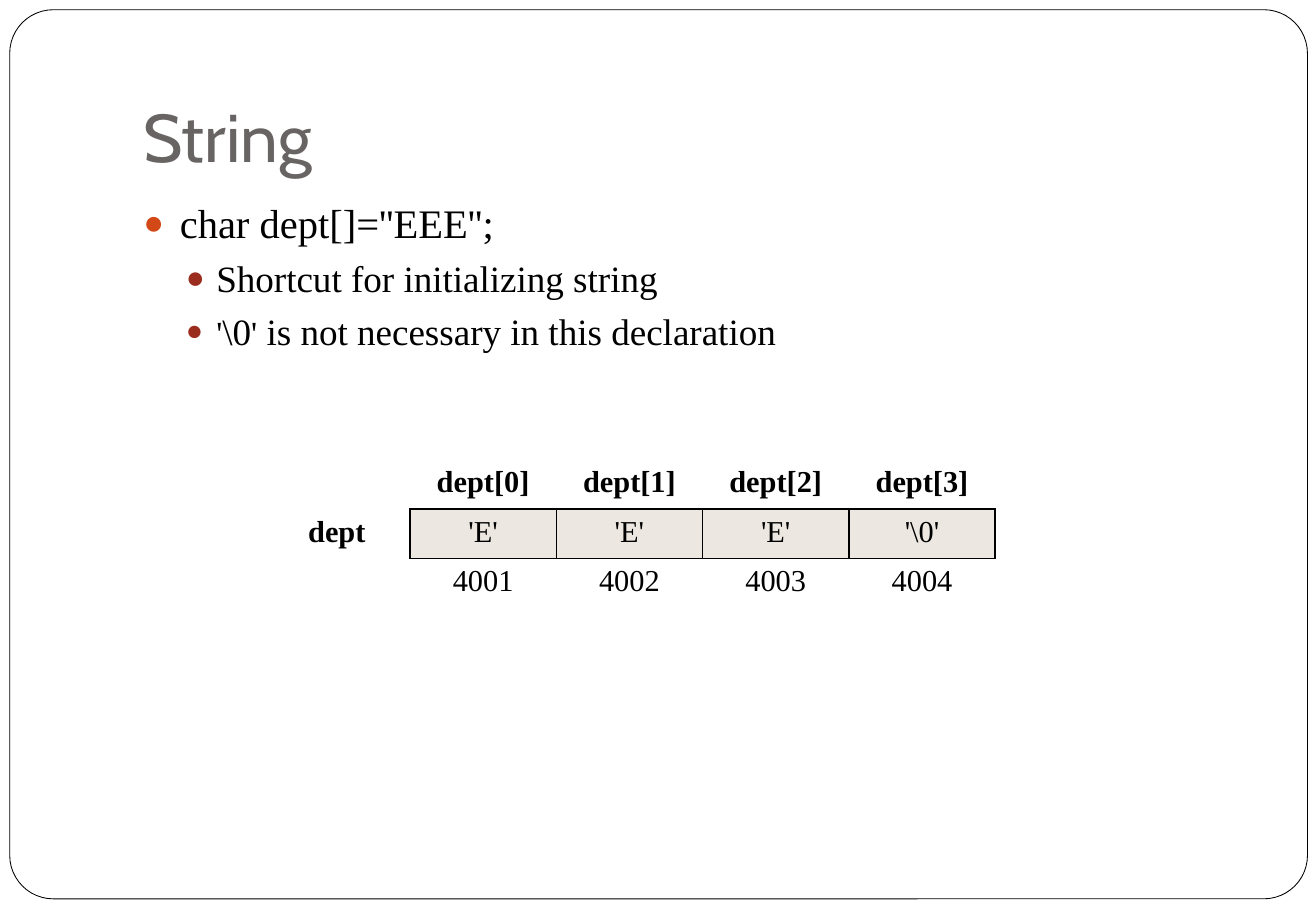
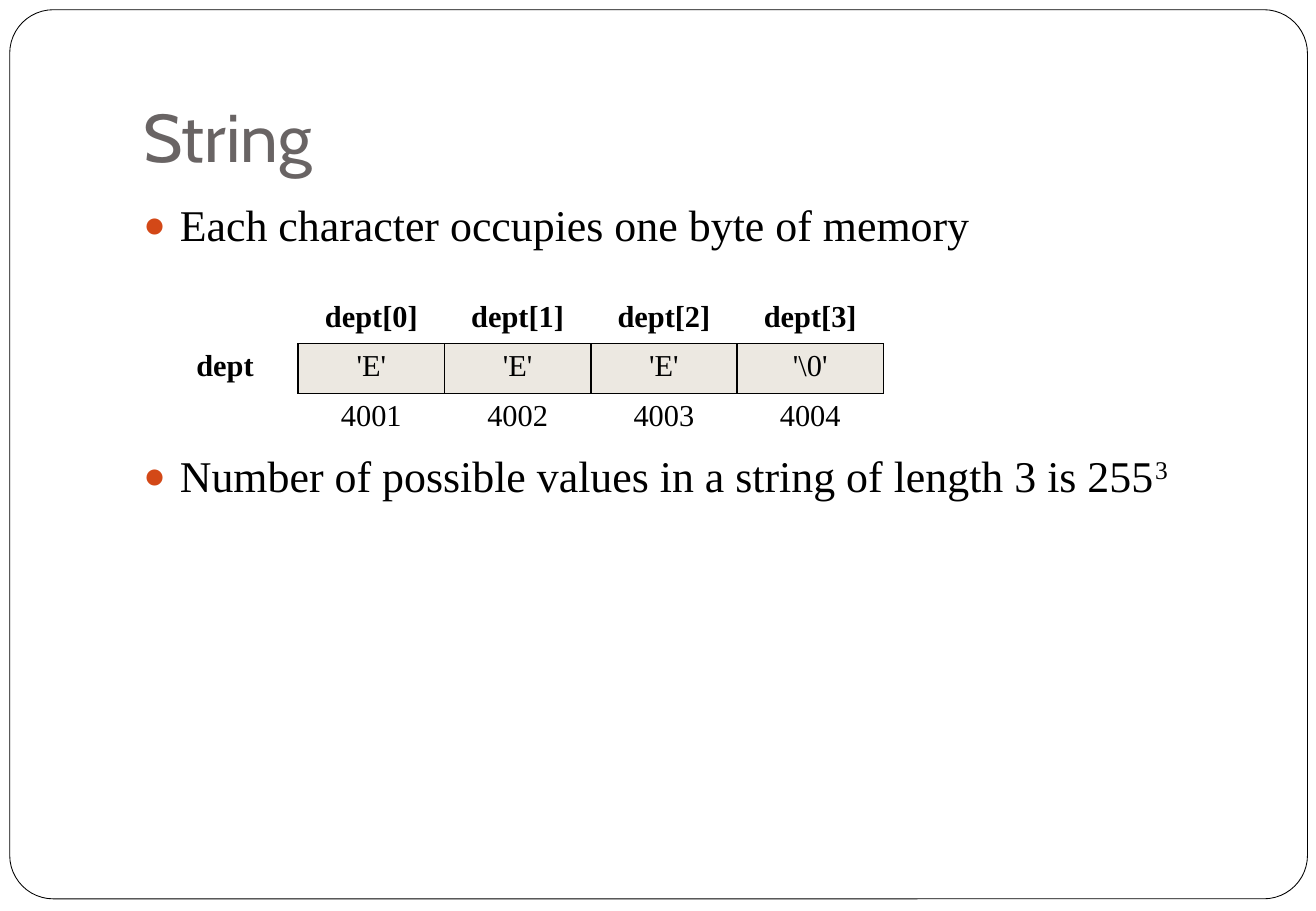
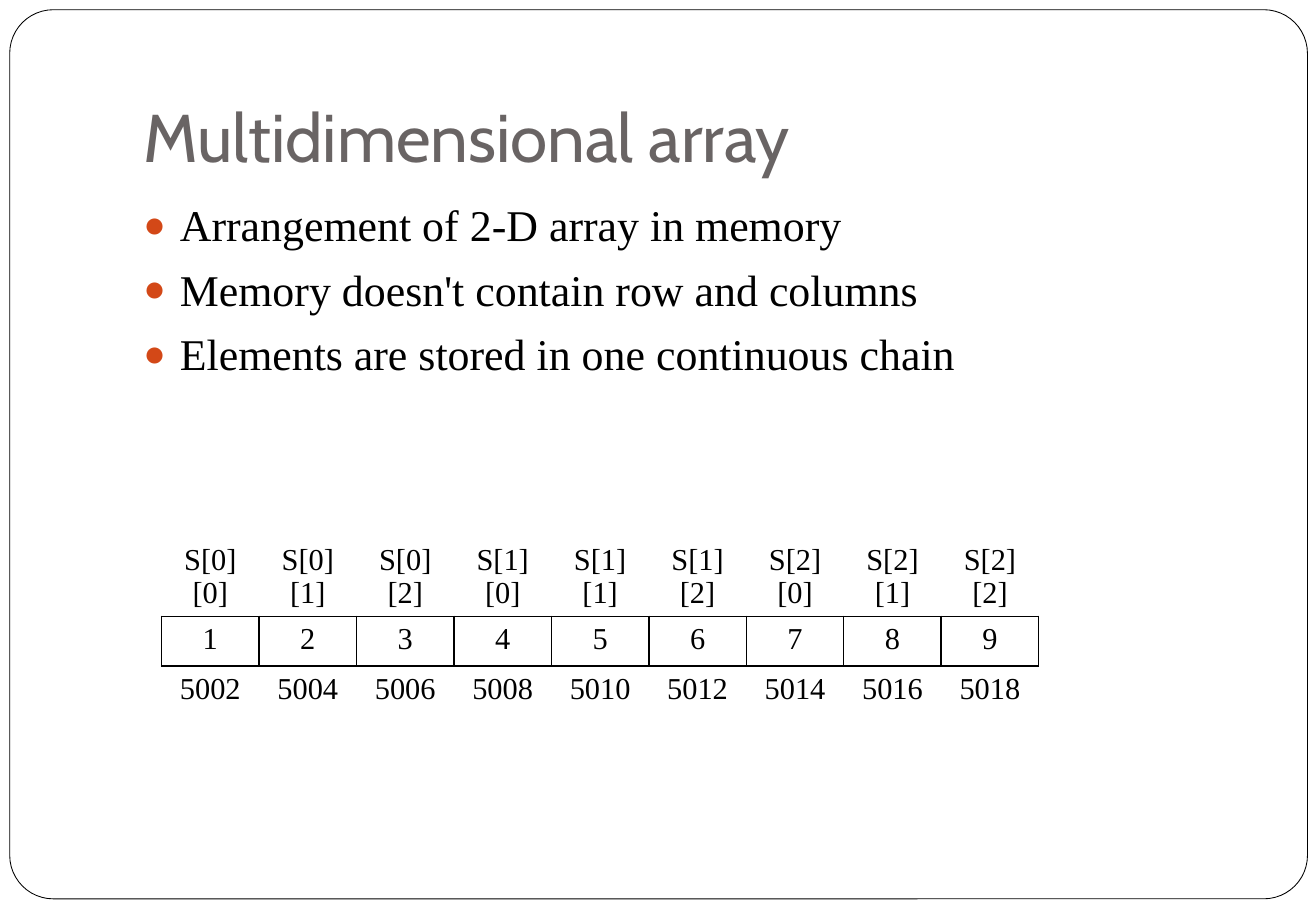
import dataclasses

import lxml.etree
import pptx
import pptx.dml.color
import pptx.enum.shapes
import pptx.enum.text
import pptx.oxml.ns
import pptx.util

Inches = pptx.util.Inches
Pt = pptx.util.Pt
qn = pptx.oxml.ns.qn
ANCHOR = pptx.enum.text.MSO_ANCHOR
ALIGN = pptx.enum.text.PP_ALIGN
NO_STYLE = "{2D5ABB26-0587-4C30-8999-92F81FD0307C}"


@dataclasses.dataclass(frozen=True)
class Theme:
    title_font: str = "Cabin"
    body_font: str = "Times New Roman"
    title_color: str = "696464"
    ink: str = "000000"
    paper: str = "FFFFFF"
    cell_fill: str = "ECE8E1"
    bullets: tuple = ("D34817", "9B2D1F")
    indents: tuple = ((0.3, 0.3), (0.6, 0.25))
    space_before: tuple = (7, 5)
    title_size: int = 40
    list_size: int = 26
    code_size: int = 24
    sub_size: int = 22
    quote_size: int = 20
    table_size: int = 18
    frame_line: float = 0.5
    cell_line: float = 1


THEME = Theme()
PAGE = (10.83, 7.5)
FRAME_BOX = (0.08, 0.08, 10.68, 7.32)
TITLE_BOX = (1.08, 0.3, 9.21, 1.25)
BODY_BOX = (1.08, 1.58, 9.21, 5)
ROW_HEIGHT = 0.41


def rgb(value):
    return pptx.dml.color.RGBColor.from_string(value)


def apply(obj, values):
    for name, value in values.items():
        setattr(obj, name, value)


def place(sp, box):
    names = ("left", "top", "width", "height")
    apply(sp, dict(zip(names, map(Inches, box))))


def add_run(p, text, size, font=THEME.body_font, color=THEME.ink, bold=False):
    r = p.add_run()
    r.text = text
    apply(r.font, {"name": font, "size": Pt(size), "bold": bold})
    r.font.color.rgb = rgb(color)
    return r


def add_child(parent, tag, **attributes):
    return lxml.etree.SubElement(parent, qn(tag), attributes)


def set_bullet(p, level):
    pPr = p._p.get_or_add_pPr()
    left, hanging = THEME.indents[level]
    pPr.set("marL", str(Inches(left)))
    pPr.set("indent", str(-Inches(hanging)))
    color = add_child(pPr, "a:buClr")
    add_child(color, "a:srgbClr", val=THEME.bullets[level])
    add_child(pPr, "a:buSzPct", val="85000")
    add_child(pPr, "a:buChar", char="●")


def add_frame(prs, s, box):
    sp = s.shapes.add_shape(
        pptx.enum.shapes.MSO_SHAPE.ROUNDED_RECTANGLE, *map(Inches, box))
    sp.shadow.inherit = False
    sp.adjustments[0] = 0.049
    sp.fill.solid()
    sp.fill.fore_color.rgb = rgb(THEME.paper)
    sp.line.color.rgb = rgb(THEME.ink)
    sp.line.width = Pt(THEME.frame_line)
    prs.slide_master.element.cSld.spTree.insert(2, sp.element)


def fill_title(sp, box, text):
    place(sp, box)
    tf = sp.text_frame
    apply(tf, {
        "vertical_anchor": ANCHOR.BOTTOM, "word_wrap": True,
        "margin_left": Inches(0.1), "margin_right": Inches(0.1),
        "margin_top": Inches(0.05), "margin_bottom": Inches(0.1)})
    p = tf.paragraphs[0]
    p.alignment = ALIGN.LEFT
    add_run(p, text, THEME.title_size, THEME.title_font, THEME.title_color)


def fill_list(sp, box, items):
    place(sp, box)
    tf = sp.text_frame
    apply(tf, {"word_wrap": True, "vertical_anchor": ANCHOR.TOP,
               "auto_size": pptx.enum.text.MSO_AUTO_SIZE.NONE})
    for index, item in enumerate(items):
        p = tf.add_paragraph() if index else tf.paragraphs[0]
        level = item.get("level", 0)
        gap = item.get("gap", THEME.space_before[level])
        apply(p, {"level": level, "space_before": Pt(gap),
                  "alignment": ALIGN.LEFT})
        set_bullet(p, level)
        for text, size in item["runs"]:
            add_run(p, text, size)
        if "power" in item:
            r = add_run(p, item["power"], THEME.list_size)
            r._r.get_or_add_rPr().set("baseline", "30000")


def set_borders(cell, sides):
    tcPr = cell._tc.get_or_add_tcPr()
    for index, side in enumerate("LRTB"):
        if side not in sides:
            continue
        line = lxml.etree.Element(
            qn(f"a:ln{side}"), w=str(Pt(THEME.cell_line)))
        color = add_child(add_child(line, "a:solidFill"), "a:srgbClr")
        color.set("val", THEME.ink)
        tcPr.insert(index, line)


def add_memory_table(s, box, names, values, addresses, label=None,
                     bold=False, fill=None, name_height=ROW_HEIGHT):
    rows = [names, values, addresses]
    first = 0
    if label:
        rows = [[lead, *row] for lead, row in zip(("", label, ""), rows)]
        first = 1
    count = len(rows[0])
    table = s.shapes.add_table(3, count, *map(Inches, box)).table
    apply(table, {"first_row": False, "horz_banding": False})
    table._tbl.tblPr.find(qn("a:tableStyleId")).text = NO_STYLE
    for column in table.columns:
        column.width = Inches(box[2] / count)
    for row, height in zip(table.rows, (name_height, ROW_HEIGHT, ROW_HEIGHT)):
        row.height = Inches(height)
    for i, row in enumerate(rows):
        for j, text in enumerate(row):
            cell = table.cell(i, j)
            is_label = j < first
            p = cell.text_frame.paragraphs[0]
            p.alignment = ALIGN.CENTER
            p.font.size = Pt(THEME.table_size)
            if text:
                add_run(p, text, THEME.table_size,
                        bold=bold and (i == 0 or is_label))
            if fill and i == 1 and not is_label:
                cell.fill.solid()
                cell.fill.fore_color.rgb = rgb(fill)
            else:
                cell.fill.background()
            if is_label:
                set_borders(cell, "R" if i == 1 else "")
            else:
                set_borders(cell, ("B", "LRTB", "T")[i])


def add_string_table(s, box):
    add_memory_table(
        s, box, [f"dept[{i}]" for i in range(4)],
        ["'E'"] * 3 + [r"'\0'"], [str(4001 + i) for i in range(4)],
        label="dept", bold=True, fill=THEME.cell_fill)


def add_matrix_table(s, box):
    add_memory_table(
        s, box, [f"S[{i}][{j}]" for i in range(3) for j in range(3)],
        [str(i + 1) for i in range(9)],
        [str(5002 + 2 * i) for i in range(9)], name_height=0.65)


def add_slide(prs, title, items, add_table, table_box):
    s = prs.slides.add_slide(prs.slide_layouts[1])
    fill_title(s.shapes.title, TITLE_BOX, title)
    fill_list(s.placeholders[1], BODY_BOX, items)
    add_table(s, table_box)
    return s


def bullet(text, size=THEME.list_size, **options):
    return {"runs": [(text, size)], **options}


def main():
    prs = pptx.Presentation()
    prs.slide_width, prs.slide_height = map(Inches, PAGE)
    quote = ("'", THEME.quote_size)
    declaration = [
        bullet("char dept[]=''EEE'';", THEME.code_size),
        bullet("Shortcut for initializing string", THEME.sub_size, level=1),
        {"level": 1, "runs": [
            quote, (r"\0", THEME.sub_size), quote,
            (" is not necessary in this declaration", THEME.sub_size)]},
    ]
    size = [
        bullet("Each character occupies one byte of memory"),
        bullet("Number of possible values in a string of length 3 is 255",
               gap=117.7, power="3"),
    ]
    arrangement = [
        bullet("Arrangement of 2-D array in memory"),
        bullet("Memory doesn't contain row and columns"),
        bullet("Elements are stored in one continuous chain"),
    ]
    s = add_slide(prs, "String", declaration,
                  add_string_table, (2.17, 3.78, 6.02, 1.22))
    add_frame(prs, s, FRAME_BOX)
    add_slide(prs, "String", size,
              add_string_table, (1.25, 2.42, 6.02, 1.22))
    add_slide(prs, "Multidimensional array", arrangement,
              add_matrix_table, (1.33, 4.42, 7.22, 1.47))
    prs.save("out.pptx")


if __name__ == "__main__":
    main()
